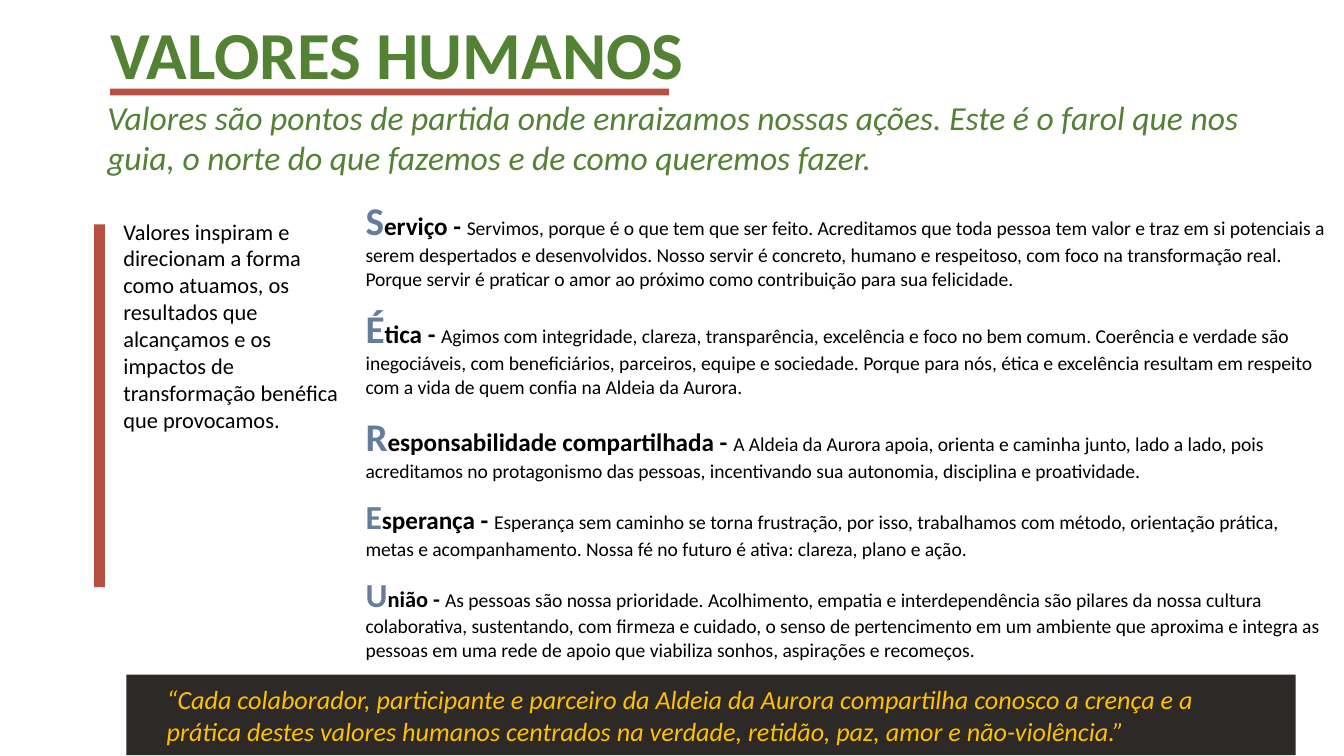
from dataclasses import dataclass

import pptx
import pptx.dml.color
import pptx.enum.shapes
import pptx.enum.text
import pptx.oxml.ns
import pptx.util

FONT = "Calibri"
GREEN, RED, BLUE = "548235", "B85042", "657D9D"
BLACK, DARK, GOLD = "000000", "2D2926", "FFC000"
ANCHOR = pptx.enum.text.MSO_ANCHOR
WIDTH = pptx.util.Inches(10)
HEIGHT = WIDTH * 9 // 16
CELL = WIDTH // 100  # square grid of 100 columns


@dataclass
class Area:
    """Position and size in grid columns and rows."""
    col: float
    row: float
    cols: float
    rows: float

    def emu(self) -> list[int]:
        return [round(n * CELL) for n in (self.col, self.row, self.cols, self.rows)]


@dataclass
class Value:
    initial: str
    rest: str
    text: str
    initial_size: float = 21
    rest_size: float = 13.5


VALUES = [
    Value("S", "erviço - ",
          "Servimos, porque é o que tem que ser feito. Acreditamos que toda pessoa tem valor "
          "e traz em si potenciais a serem despertados e desenvolvidos. Nosso servir é concreto, "
          "humano e respeitoso, com foco na transformação real. Porque servir é praticar o amor "
          "ao próximo como contribuição para sua felicidade."),
    Value("É", "tica - ",
          "Agimos com integridade, clareza, transparência, excelência e foco no bem comum. "
          "Coerência e verdade são inegociáveis, com beneficiários, parceiros, equipe e sociedade. "
          "Porque para nós, ética e excelência resultam em respeito com a vida de quem confia na "
          "Aldeia da Aurora."),
    Value("R", "esponsabilidade compartilhada - ",
          "A Aldeia da Aurora apoia, orienta e caminha junto, lado a lado, pois acreditamos no "
          "protagonismo das pessoas, incentivando sua autonomia, disciplina e proatividade."),
    Value("E", "sperança - ",
          "Esperança sem caminho se torna frustração, por isso, trabalhamos com método, "
          "orientação prática, metas e acompanhamento. Nossa fé no futuro é ativa: clareza, "
          "plano e ação.", 18),
    Value("U", "nião - ",
          "As pessoas são nossa prioridade. Acolhimento, empatia e interdependência são pilares "
          "da nossa cultura colaborativa, sustentando, com firmeza e cuidado, o senso de "
          "pertencimento em um ambiente que aproxima e integra as pessoas em uma rede de apoio "
          "que viabiliza sonhos, aspirações e recomeços.", 18, 12),
]


def color(value: str) -> pptx.dml.color.RGBColor:
    return pptx.dml.color.RGBColor.from_string(value)


def style(r, size: float, hex_color: str, bold: bool = False, italic: bool = False) -> None:
    r.font.name = FONT
    r.font.size = pptx.util.Pt(size)
    r.font.color.rgb = color(hex_color)
    r.font.bold = bold
    r.font.italic = italic


def frame(sp, anchor=ANCHOR.TOP, inset: bool = True):
    """Prepare a wrapped text frame, with or without the usual margins."""
    tf = sp.text_frame
    tf.word_wrap = True
    tf.auto_size = pptx.enum.text.MSO_AUTO_SIZE.NONE
    tf.vertical_anchor = anchor
    if not inset:
        tf.margin_left = tf.margin_right = tf.margin_top = tf.margin_bottom = 0
    return tf


def place(sp, area: Area) -> None:
    sp.left, sp.top, sp.width, sp.height = area.emu()


def bar(s, area: Area, fill: str) -> None:
    sp = s.shapes.add_shape(pptx.enum.shapes.MSO_SHAPE.RECTANGLE, *area.emu())
    sp.shadow.inherit = False
    sp.fill.solid()
    sp.fill.fore_color.rgb = color(fill)
    sp.line.fill.background()


def text(s, area: Area, words: str, size: float, hex_color: str,
         italic: bool = False, anchor=ANCHOR.TOP, inset: bool = True) -> None:
    tf = frame(s.shapes.add_textbox(*area.emu()), anchor, inset)
    tf.text = words
    style(tf.paragraphs[0].runs[0], size, hex_color, italic=italic)


def value_list(sp, values: list[Value]) -> None:
    tf = frame(sp)
    for i, v in enumerate(values):
        p = tf.add_paragraph() if i else tf.paragraphs[0]
        pPr = p._p.get_or_add_pPr()
        pPr.set("marL", "0")
        pPr.set("indent", "0")
        pPr.append(pPr.makeelement(pptx.oxml.ns.qn("a:buNone"), {}))
        p.space_before = pptx.util.Pt(7.4 if i else 0)
        for words, size, hex_color, bold in (
            (v.initial, v.initial_size, BLUE, True),
            (v.rest, v.rest_size, BLACK, True),
            (v.text, 10.5, BLACK, False),
        ):
            r = p.add_run()
            r.text = words
            style(r, size, hex_color, bold)


def main() -> None:
    prs = pptx.Presentation()
    prs.slide_width, prs.slide_height = WIDTH, HEIGHT
    s = prs.slides.add_slide(prs.slide_layouts[1])

    # Title, underline and introduction
    title = s.shapes.title
    place(title, Area(8.2, 0.4, 80, 7))
    tf = frame(title, ANCHOR.MIDDLE, inset=False)
    tf.text = "VALORES HUMANOS"
    tf.paragraphs[0].alignment = pptx.enum.text.PP_ALIGN.LEFT
    style(tf.paragraphs[0].runs[0], 36, GREEN, bold=True)
    bar(s, Area(8.2, 6.6, 41.6, 0.5), RED)
    text(s, Area(7, 6.7, 89.4, 7.1),
         "Valores são pontos de partida onde enraizamos nossas ações. Este é o farol que nos "
         "guia, o norte do que fazemos e de como queremos fazer.", 18, GREEN, italic=True)

    # Side note
    bar(s, Area(7, 16.7, 0.8, 27), RED)
    text(s, Area(8.2, 15.7, 18, 19.2),
         "Valores inspiram e direcionam a forma como atuamos, os resultados que alcançamos e "
         "os impactos de transformação benéfica que provocamos.", 12, BLACK)

    # Values
    body = s.placeholders[1]
    place(body, Area(26.2, 14.1, 73.8, 35.8))
    value_list(body, VALUES)

    # Closing quote
    bar(s, Area(9.4, 50.2, 87, 6), DARK)
    text(s, Area(12.4, 50.2, 80, 6),
         "“Cada colaborador, participante e parceiro da Aldeia da Aurora compartilha conosco a "
         "crença e a prática destes valores humanos centrados na verdade, retidão, paz, amor e "
         "não-violência.”", 14, GOLD, italic=True, anchor=ANCHOR.MIDDLE, inset=False)

    prs.save("out.pptx")


if __name__ == "__main__":
    main()
